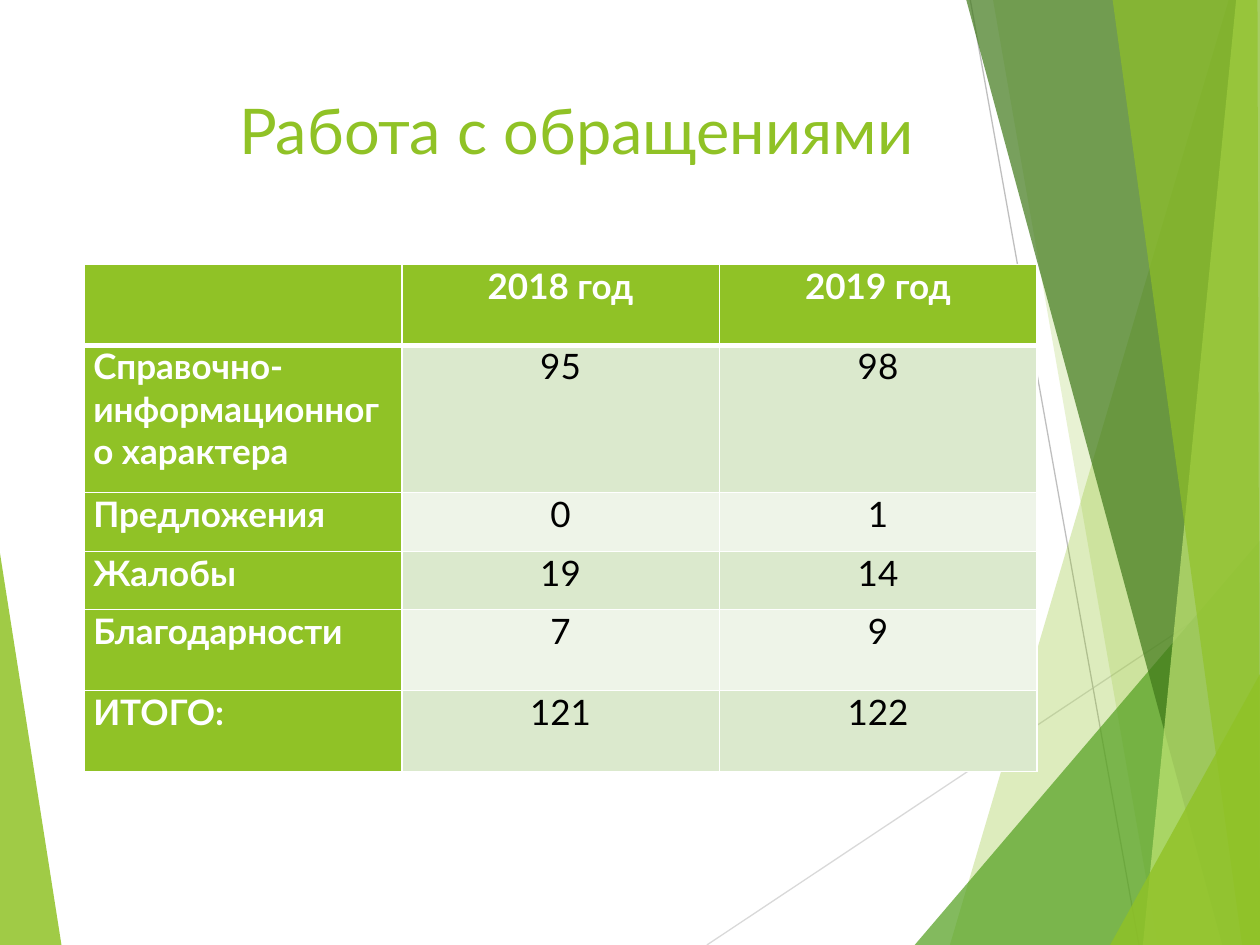
from lxml import etree
from pptx import Presentation
from pptx.dml.color import RGBColor
from pptx.enum.shapes import MSO_CONNECTOR
from pptx.enum.text import MSO_ANCHOR, PP_ALIGN
from pptx.oxml.ns import qn
from pptx.util import Cm, Pt

STRAIGHT = MSO_CONNECTOR.STRAIGHT
TOP = MSO_ANCHOR.TOP
LEFT, CENTER = PP_ALIGN.LEFT, PP_ALIGN.CENTER

WIDTH, HEIGHT = 25.4, 19.05
FONT = "Lato"
GREEN, WHITE, BLACK = "90C226", "FFFFFF", "000000"
BANDS = ("DBE9CD", "EEF4E8")

# Facets from back to front: colour, opacity in percent, corners in cm
LEFT_FACET = (GREEN, 85, [(0, 11.15), (1.24, HEIGHT), (0, HEIGHT)])
RIGHT_FACETS = [
    (GREEN, 30, [(24.77, 0), (19.15, HEIGHT), (WIDTH, HEIGHT), (WIDTH, 0)]),
    (GREEN, 20, [(20.02, 0), (23.34, HEIGHT), (WIDTH, HEIGHT), (WIDTH, 0)]),
    ("54A021", 72, [(18.44, HEIGHT), (WIDTH, 10.9), (WIDTH, HEIGHT)]),
    ("3F7819", 70, [(19.48, 0), (24.64, HEIGHT), (WIDTH, HEIGHT), (WIDTH, 0)]),
    ("C0E474", 70, [(24.92, 0), (23.04, HEIGHT), (WIDTH, HEIGHT), (WIDTH, 0)]),
    (GREEN, 65, [(22.43, 0), (25.04, HEIGHT), (WIDTH, HEIGHT), (25.35, 0)]),
    (GREEN, 80, [(22.38, HEIGHT), (WIDTH, 13.59), (WIDTH, HEIGHT)]),
]

COLUMN_WIDTH = 6.4
ROW_HEIGHTS = [1.63, 2.97, 1.19, 1.17, 1.63, 1.63]
ROWS = [
    ("", "2018 год", "2019 год"),
    ("Справочно-информационного характера", "95", "98"),
    ("Предложения", "0", "1"),
    ("Жалобы", "19", "14"),
    ("Благодарности", "7", "9"),
    ("ИТОГО:", "121", "122"),
]


def color(value):
    return RGBColor.from_string(value)


def add_run(paragraph, text, size, value, bold=False):
    run = paragraph.add_run()
    run.text = text
    run.font.name = FONT
    run.font.size = Pt(size)
    run.font.bold = bold
    run.font.color.rgb = color(value)


def add_facet(slide, value, opacity, corners):
    points = [(Cm(x), Cm(y)) for x, y in corners]
    builder = slide.shapes.build_freeform(*points[0])
    builder.add_line_segments(points[1:], close=True)
    shape = builder.convert_to_shape()
    shape.shadow.inherit = False
    shape.line.fill.background()
    shape.fill.solid()
    shape.fill.fore_color.rgb = color(value)
    fill_color = shape.fill._xPr.find(qn("a:solidFill"))[0]
    etree.SubElement(fill_color, qn("a:alpha"), val=str(opacity * 1000))


def add_line(slide, start, end, value):
    ends = [Cm(length) for length in (*start, *end)]
    connector = slide.shapes.add_connector(STRAIGHT, *ends)
    connector.line.color.rgb = color(value)
    connector.line.width = Pt(0.75)
    etree.SubElement(connector._element.spPr, qn("a:effectLst"))


def add_title(slide, text):
    box = slide.shapes.add_textbox(Cm(4.57), Cm(1.73), Cm(18.31), Cm(3.56))
    frame = box.text_frame
    frame.word_wrap = True
    frame.vertical_anchor = TOP
    add_run(frame.paragraphs[0], text, 36, GREEN)


def set_borders(cell, top, bottom):
    properties = cell._tc.get_or_add_tcPr()
    for side, width in (("L", 1), ("R", 1), ("T", top), ("B", bottom)):
        line = etree.SubElement(properties, qn(f"a:ln{side}"), w=str(Pt(width)))
        fill = etree.SubElement(line, qn("a:solidFill"))
        etree.SubElement(fill, qn("a:srgbClr"), val=WHITE)


def fill_cell(cell, text, row, column):
    is_heading = row == 0 or column == 0
    # A thick rule parts the heading row from the body
    set_borders(cell, top=3 if row == 1 else 1, bottom=3 if row == 0 else 1)
    cell.fill.solid()
    cell.fill.fore_color.rgb = color(GREEN if is_heading else BANDS[(row - 1) % 2])
    cell.margin_left = cell.margin_right = Cm(0.18)
    cell.margin_top = cell.margin_bottom = 0
    cell.vertical_anchor = TOP
    paragraph = cell.text_frame.paragraphs[0]
    paragraph.alignment = CENTER if column else LEFT
    if text:
        add_run(paragraph, text, 20, WHITE if is_heading else BLACK, is_heading)


def add_requests_table(slide):
    columns = len(ROWS[0])
    frame = slide.shapes.add_table(
        len(ROWS), columns, Cm(1.7), Cm(5.33),
        Cm(COLUMN_WIDTH * columns), Cm(sum(ROW_HEIGHTS)))
    table = frame.table
    for column in table.columns:
        column.width = Cm(COLUMN_WIDTH)
    for row, (height, texts) in enumerate(zip(ROW_HEIGHTS, ROWS)):
        table.rows[row].height = Cm(height)
        for column, text in enumerate(texts):
            fill_cell(table.cell(row, column), text, row, column)


def main():
    presentation = Presentation()
    presentation.slide_width = Cm(WIDTH)
    presentation.slide_height = Cm(HEIGHT)
    slide = presentation.slides.add_slide(presentation.slide_layouts[6])

    # Background decoration
    add_facet(slide, *LEFT_FACET)
    add_line(slide, (14.25, HEIGHT), (WIDTH, 11.63), "D9D9D9")
    add_line(slide, (19.56, 0), (22.96, HEIGHT), "BFBFBF")
    for facet in RIGHT_FACETS:
        add_facet(slide, *facet)

    # Content
    add_title(slide, "Работа с обращениями")
    add_requests_table(slide)

    presentation.save("out.pptx")


if __name__ == "__main__":
    main()
